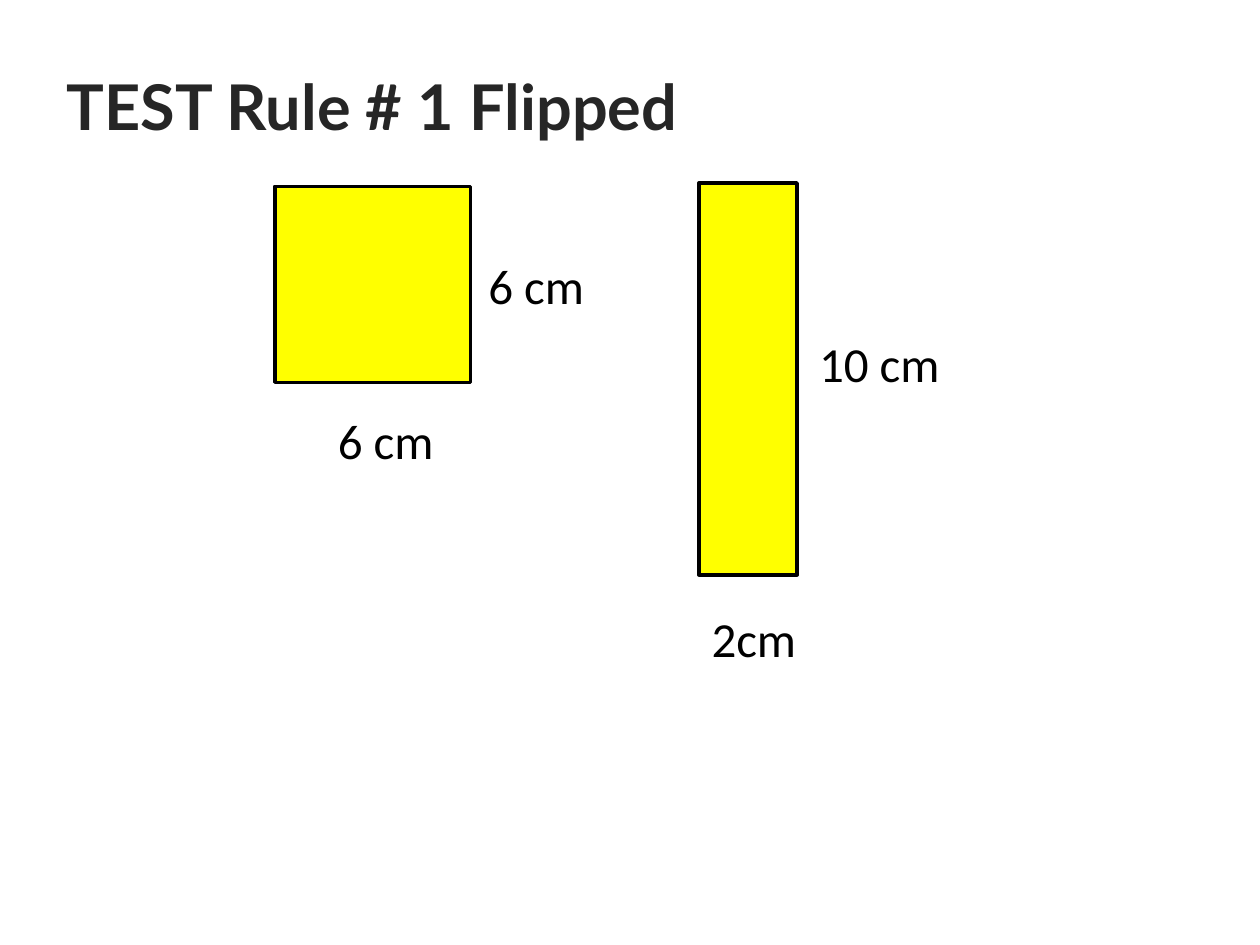
from pptx import Presentation
from pptx.dml.color import RGBColor
from pptx.enum.shapes import MSO_SHAPE as Shape
from pptx.enum.text import MSO_ANCHOR as Anchor, MSO_AUTO_SIZE as AutoSize, PP_ALIGN as Align
from pptx.util import Pt

COLORS = {"title": "262626", "fill": "FFFF00", "ink": "000000"}


def color(name):
    return RGBColor.from_string(COLORS[name])


def points(*lengths):
    return [Pt(length) for length in lengths]


def style_font(font, name, size, color_name, bold=False):
    font.name = name
    font.size = Pt(size)
    font.bold = bold
    font.color.rgb = color(color_name)


def set_title(slide, text, box):
    title = slide.shapes.title
    title.left, title.top, title.width, title.height = points(*box)
    frame = title.text_frame
    frame.text = text
    frame.auto_size = AutoSize.NONE
    frame.vertical_anchor = Anchor.MIDDLE
    paragraph = frame.paragraphs[0]
    paragraph.alignment = Align.LEFT
    style_font(paragraph.font, "Lato", 36, "title", bold=True)


def add_rectangle(group, box, rotation):
    rectangle = group.shapes.add_shape(Shape.RECTANGLE, *points(*box))
    rectangle.rotation = rotation
    rectangle.shadow.inherit = False
    rectangle.fill.solid()
    rectangle.fill.fore_color.rgb = color("fill")
    rectangle.line.color.rgb = color("ink")
    rectangle.line.width = Pt(2)


def add_label(group, text, box):
    frame = group.shapes.add_textbox(*points(*box)).text_frame
    frame.word_wrap = True
    frame.text = text
    paragraph = frame.paragraphs[0]
    paragraph.line_spacing = 1.15
    paragraph.space_after = Pt(10)
    style_font(paragraph.font, "Calibri", 28, "ink")


def add_figure(slide, rectangle_box, labels, rotation=0):
    group = slide.shapes.add_group_shape()
    add_rectangle(group, rectangle_box, rotation)
    for text, box in labels:
        add_label(group, text, box)


def main():
    presentation = Presentation()
    presentation.slide_width, presentation.slide_height = points(720, 540)
    slide = presentation.slides.add_slide(presentation.slide_layouts[5])
    set_title(slide, "TEST Rule # 1 Flipped", (31, 15, 648, 90))
    add_figure(slide, (157, 106.5, 112, 112), [
        ("6 cm", (186, 226, 83, 34)),
        ("6 cm", (272, 137.5, 77, 51)),
    ])
    add_figure(slide, (315.5, 188.5, 224, 56), [
        ("2cm", (399.5, 339, 90, 42.5)),
        ("10 cm", (461, 182, 116, 49)),
    ], rotation=270)
    presentation.save("out.pptx")


if __name__ == "__main__":
    main()
